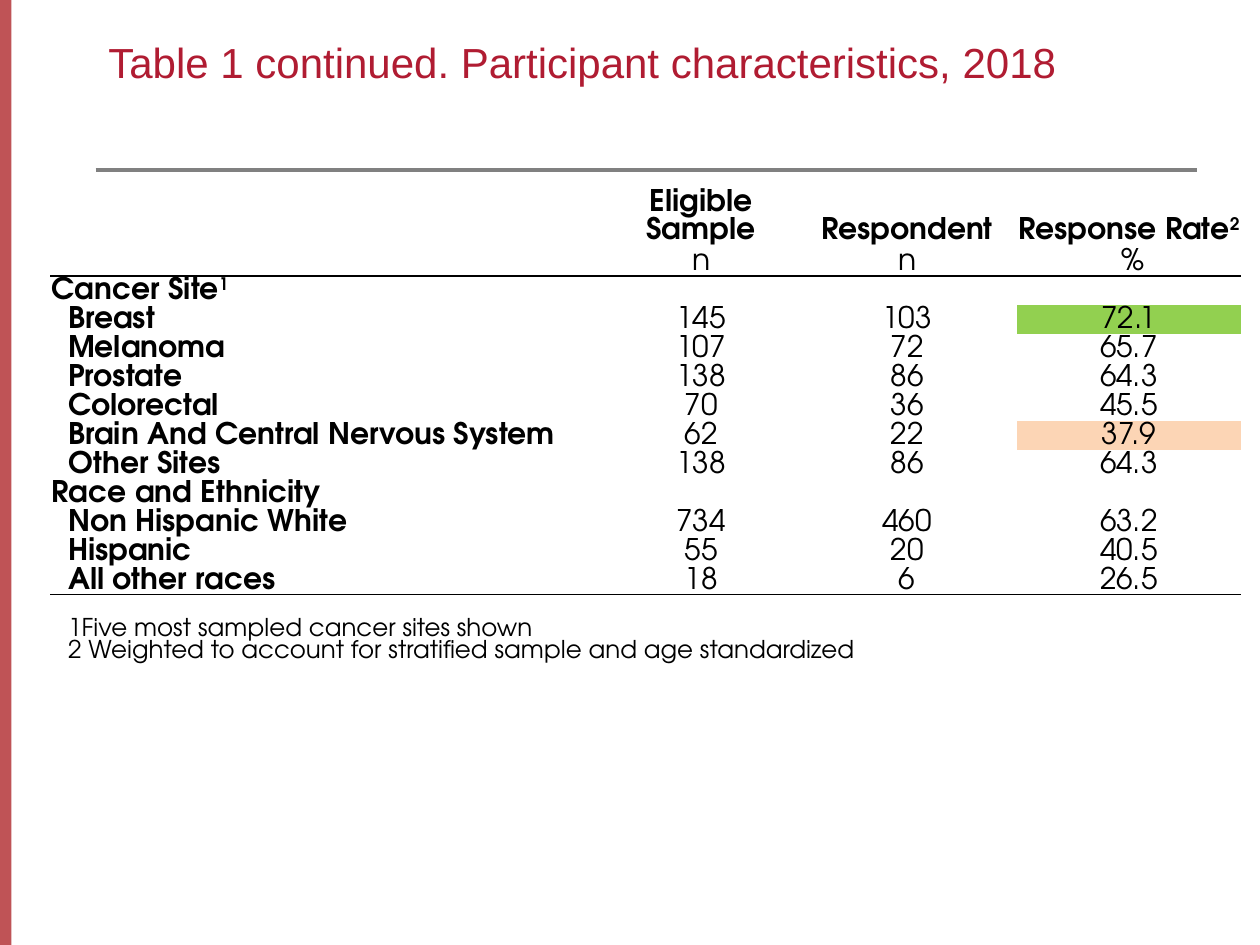
from dataclasses import dataclass

from lxml import etree
from pptx import Presentation
from pptx.dml.color import RGBColor
from pptx.enum.shapes import MSO_CONNECTOR, MSO_SHAPE
from pptx.enum.text import MSO_ANCHOR, PP_ALIGN
from pptx.oxml.ns import qn
from pptx.util import Inches, Pt

LEFT, CENTER = PP_ALIGN.LEFT, PP_ALIGN.CENTER
TOP, BOTTOM = MSO_ANCHOR.TOP, MSO_ANCHOR.BOTTOM
RECTANGLE = MSO_SHAPE.RECTANGLE
STRAIGHT = MSO_CONNECTOR.STRAIGHT
TITLE_ONLY_LAYOUT = 5
PLAIN_TABLE_STYLE = "{2D5ABB26-0587-4C30-8999-92F81FD0307C}"


@dataclass(frozen=True)
class Theme:
    sidebar: str = "AF282C"
    rule: str = "808080"
    title: str = "B01C32"
    ink: str = "000000"
    highest: str = "92D050"
    lowest: str = "FCD5B5"
    title_font: str = "Arial"
    table_font: str = "TeX Gyre Adventor"
    title_size: float = 24
    table_size: float = 17
    table_line: float = 15.5
    note_size: float = 14
    note_line: float = 12.6
    empty_size: float = 8


THEME = Theme()

TITLE = "Table 1 continued. Participant characteristics, 2018"
# Each label is a pair: text and superscript
HEADINGS = [("Eligible Sample", ""), ("Respondent", ""), ("Response Rate", "2")]
# Each unit has its left margin
UNITS = [("n", 0), ("n", 0), ("%", 0.06)]
GROUPS = [
    (("Cancer Site", "1"), [
        ("Breast", "145", "103", "72.1"),
        ("Melanoma", "107", "72", "65.7"),
        ("Prostate", "138", "86", "64.3"),
        ("Colorectal", "70", "36", "45.5"),
        ("Brain And Central Nervous System", "62", "22", "37.9"),
        ("Other Sites", "138", "86", "64.3"),
    ]),
    (("Race and Ethnicity", ""), [
        ("Non Hispanic White", "734", "460", "63.2"),
        ("Hispanic", "55", "20", "40.5"),
        ("All other races", "18", "6", "26.5"),
    ]),
]
NOTES = [
    "1Five most sampled cancer sites shown",
    "2 Weighted to account for stratified sample and age standardized",
]
RATE_FILLS = {"Breast": THEME.highest, "Brain And Central Nervous System": THEME.lowest}

COLUMN_WIDTHS = [4.4, 1.53, 1.74, 1.78]
HEADING_HEIGHT, UNIT_HEIGHT, ROW_HEIGHT, NOTES_HEIGHT = 0.43, 0.25, 0.23, 0.54
INDENT, EDGE = 0.14, 0.01


def rgb(value):
    return RGBColor.from_string(value)


def add_run(paragraph, text, font, size, color, bold=False, superscript=False):
    run = paragraph.add_run()
    run.text = text
    run.font.name = font
    run.font.size = Pt(size)
    run.font.bold = bold
    run.font.color.rgb = rgb(color)
    if superscript:
        run.font._element.set("baseline", "30000")


def add_sidebar(slide, box):
    sidebar = slide.shapes.add_shape(RECTANGLE, *map(Inches, box))
    sidebar.shadow.inherit = False
    sidebar.line.fill.background()
    sidebar.fill.solid()
    sidebar.fill.fore_color.rgb = rgb(THEME.sidebar)
    color = sidebar._element.spPr.find(".//" + qn("a:srgbClr"))
    etree.SubElement(color, qn("a:alpha"), val="80000")


def add_heading(slide, box):
    """Title with a rule along the lower edge of its box."""
    left, top, width, height = map(Inches, box)
    rule = slide.shapes.add_connector(STRAIGHT, left, top + height, left + width, top + height)
    rule.line.color.rgb = rgb(THEME.rule)
    rule.line.width = Pt(2.5)
    etree.SubElement(rule._element.spPr, qn("a:effectLst"))

    title = slide.shapes.title
    title.left, title.top, title.width, title.height = left, top, width, height
    frame = title.text_frame
    frame.word_wrap = True
    frame.vertical_anchor = TOP
    frame.margin_left = frame.margin_right = Inches(0.1)
    frame.margin_top = frame.margin_bottom = Inches(0.1)
    paragraph = frame.paragraphs[0]
    paragraph.alignment = LEFT
    add_run(paragraph, TITLE, THEME.title_font, THEME.title_size, THEME.title)


def prepare_cell(cell):
    """Give every cell tight margins, and small type while it is empty."""
    cell.margin_left = cell.margin_right = cell.margin_bottom = 0
    cell.margin_top = Inches(EDGE)
    cell.vertical_anchor = BOTTOM
    cell.fill.background()
    paragraph = cell.text_frame.paragraphs[0]
    paragraph.line_spacing = Pt(THEME.table_line)
    size = str(int(THEME.empty_size * 100))
    etree.SubElement(paragraph._p, qn("a:endParaRPr"), sz=size)


def write_cell(cell, text, superscript="", bold=False, alignment=CENTER, margin=0):
    cell.margin_left = Inches(margin)
    paragraph = cell.text_frame.paragraphs[0]
    paragraph.alignment = alignment
    style = (THEME.table_font, THEME.table_size, THEME.ink, bold)
    add_run(paragraph, text, *style)
    if superscript:
        add_run(paragraph, superscript, *style, superscript=True)


def rule_below(row):
    for cell in row.cells:
        line = etree.Element(qn("a:lnB"), w=str(Pt(1)))
        fill = etree.SubElement(line, qn("a:solidFill"))
        etree.SubElement(fill, qn("a:srgbClr"), val=THEME.ink)
        cell._tc.get_or_add_tcPr().insert(0, line)


def write_notes(table, row_index):
    cell = table.cell(row_index, 0)
    cell.merge(table.cell(row_index, len(COLUMN_WIDTHS) - 1))
    cell.margin_left = Inches(INDENT)
    frame = cell.text_frame
    for index, note in enumerate(NOTES):
        paragraph = frame.add_paragraph() if index else frame.paragraphs[0]
        paragraph.line_spacing = Pt(THEME.note_line)
        add_run(paragraph, note, THEME.table_font, THEME.note_size, THEME.ink)


def add_characteristics_table(slide, left, top):
    body_count = sum(1 + len(members) for _, members in GROUPS)
    heights = [HEADING_HEIGHT, UNIT_HEIGHT] + [ROW_HEIGHT] * body_count + [NOTES_HEIGHT]
    box = (left, top, sum(COLUMN_WIDTHS), sum(heights))
    frame = slide.shapes.add_table(len(heights), len(COLUMN_WIDTHS), *map(Inches, box))
    table = frame.table
    table.first_row = table.horz_banding = False
    table._tbl.tblPr.find(qn("a:tableStyleId")).text = PLAIN_TABLE_STYLE
    for column, width in zip(table.columns, COLUMN_WIDTHS):
        column.width = Inches(width)
    for row, height in zip(table.rows, heights):
        row.height = Inches(height)
    for cell in table.iter_cells():
        prepare_cell(cell)

    # Column headings and units
    for column, (heading, (unit, margin)) in enumerate(zip(HEADINGS, UNITS), start=1):
        write_cell(table.cell(0, column), *heading, bold=True)
        write_cell(table.cell(1, column), unit, margin=margin)
    rule_below(table.rows[1])

    # Groups and their members
    row = 2
    for group, members in GROUPS:
        write_cell(table.cell(row, 0), *group, bold=True, alignment=LEFT, margin=EDGE)
        for row, (label, *values) in enumerate(members, start=row + 1):
            write_cell(table.cell(row, 0), label, bold=True, alignment=LEFT, margin=INDENT)
            for column, value in enumerate(values, start=1):
                write_cell(table.cell(row, column), value)
            if label in RATE_FILLS:
                rate_cell = table.cell(row, len(values))
                rate_cell.fill.solid()
                rate_cell.fill.fore_color.rgb = rgb(RATE_FILLS[label])
        row += 1
    rule_below(table.rows[row - 1])
    write_notes(table, row)


def main():
    presentation = Presentation()
    presentation.slide_width, presentation.slide_height = Inches(10), Inches(7.5)
    slide = presentation.slides.add_slide(presentation.slide_layouts[TITLE_ONLY_LAYOUT])
    add_sidebar(slide, (0, 0, 0.09, 7.5))
    add_heading(slide, (0.76, 0.19, 8.74, 1.16))
    add_characteristics_table(slide, 0.4, 1.5)
    presentation.save("out.pptx")


if __name__ == "__main__":
    main()
